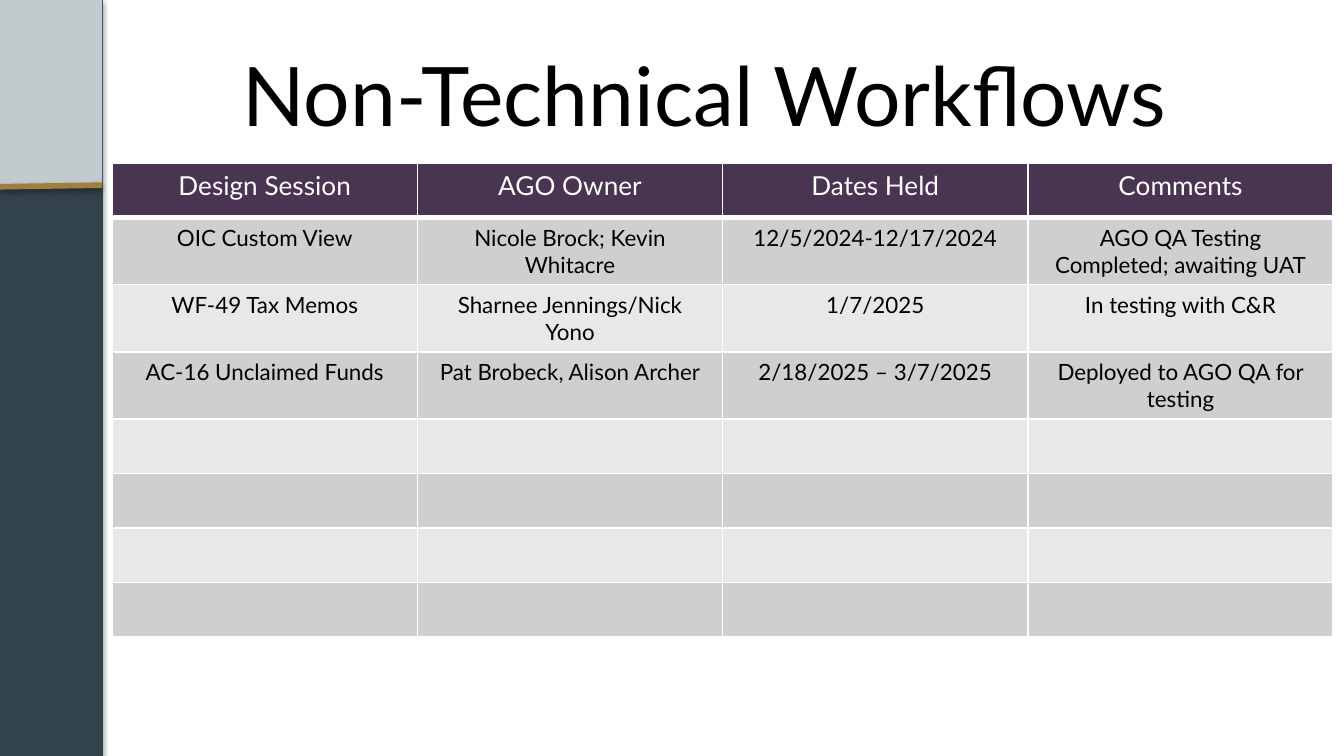
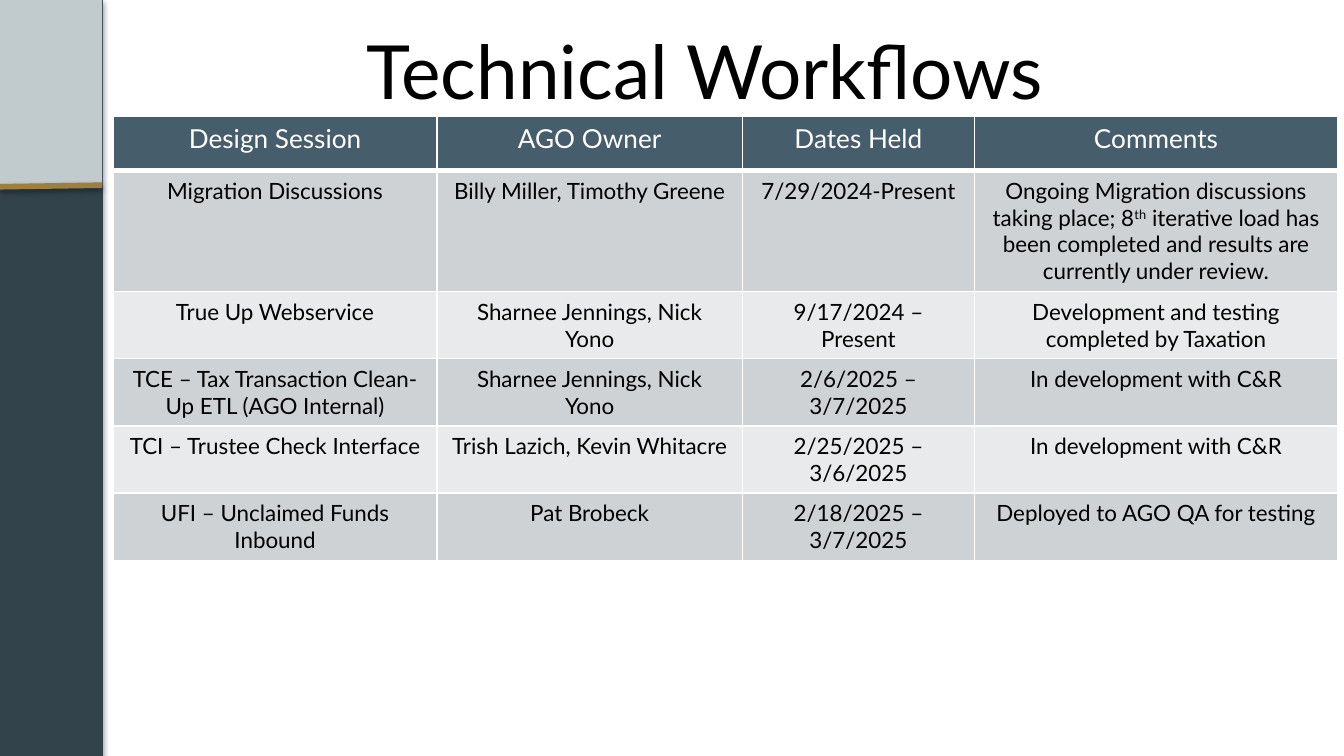
from lxml import etree
from pptx import Presentation
from pptx.dml.color import RGBColor
from pptx.enum import shapes, text
from pptx.oxml import ns
from pptx.util import Cm, Pt

FONT = "Lato"
BLACK = RGBColor(0x00, 0x00, 0x00)
WHITE = RGBColor(0xFF, 0xFF, 0xFF)
SLATE = RGBColor(0x33, 0x43, 0x4B)
MIST = RGBColor(0xC1, 0xCA, 0xCC)
GOLD = RGBColor(0x9E, 0x7F, 0x3D)
PLUM = RGBColor(0x49, 0x34, 0x51)
PLUM_BANDS = (RGBColor(0xD0, 0xCE, 0xD0), RGBColor(0xE9, 0xE8, 0xE9))
STEEL = RGBColor(0x46, 0x5D, 0x6B)
STEEL_BANDS = (RGBColor(0xCF, 0xD2, 0xD4), RGBColor(0xE9, 0xEA, 0xEB))

SLIDE_W, SLIDE_H = Cm(25.4), Cm(14.29)
SIDEBAR_W = Cm(1.93)
ROW_H = 1.03

HEADER = ("Design Session", "AGO Owner", "Dates Held", "Comments")
NON_TECHNICAL = [
    ("OIC Custom View", "Nicole Brock; Kevin Whitacre", "12/5/2024-12/17/2024",
     "AGO QA Testing Completed; awaiting UAT"),
    ("WF-49 Tax Memos", "Sharnee Jennings/Nick Yono", "1/7/2025",
     "In testing with C&R"),
    ("AC-16 Unclaimed Funds", "Pat Brobeck, Alison Archer",
     "2/18/2025 – 3/7/2025", "Deployed to AGO QA for testing"),
] + [("",) * 4] * 4
TECHNICAL = [
    ("Migration Discussions", "Billy Miller, Timothy Greene", "7/29/2024-Present",
     "Ongoing Migration discussions taking place; 8^th^ iterative load has been "
     "completed and results are currently under review."),
    ("True Up Webservice", "Sharnee Jennings, Nick Yono", "9/17/2024 – Present",
     "Development and testing completed by Taxation"),
    ("TCE – Tax Transaction Clean-Up ETL (AGO Internal)",
     "Sharnee Jennings, Nick Yono", "2/6/2025 – 3/7/2025",
     "In development with C&R"),
    ("TCI – Trustee Check Interface", "Trish Lazich, Kevin Whitacre",
     "2/25/2025 – 3/6/2025", "In development with C&R"),
    ("UFI – Unclaimed Funds Inbound", "Pat Brobeck", "2/18/2025 – 3/7/2025",
     "Deployed to AGO QA for testing"),
]


def add_xml(parent, tag, **attrs):
    child = etree.SubElement(parent, ns.qn(tag))
    for name, value in attrs.items():
        child.set(name, str(value))
    return child


class Deck:
    """Holds the shared style and the slide being built."""

    def __init__(self):
        self.prs = Presentation()
        self.prs.slide_width, self.prs.slide_height = SLIDE_W, SLIDE_H
        self.s = None

    def new_slide(self):
        self.s = self.prs.slides.add_slide(self.prs.slide_layouts[6])
        panel = self.rect(Cm(14.29), SLATE)
        panel.line.color.rgb = SLATE
        panel.line.width = Pt(0.75)
        self.shadow(panel, opacity=35, distance=1.8)
        self.rect(Cm(3.51), MIST)
        self.sidebar_rule()

    def shadow(self, sp, opacity, distance):
        """Cast a soft black shadow straight down."""
        spPr = sp._element.spPr
        effects = spPr.find(ns.qn("a:effectLst"))
        if effects is None:
            effects = add_xml(spPr, "a:effectLst")
        outer = add_xml(effects, "a:outerShdw", blurRad=Pt(3.1), dist=Pt(distance),
                        dir=90 * 60000, rotWithShape=0)
        color = add_xml(outer, "a:srgbClr", val=BLACK)
        add_xml(color, "a:alpha", val=opacity * 1000)

    def rect(self, height, fill):
        """Add a sidebar block that hangs from the top left corner."""
        sp = self.s.shapes.add_shape(
            shapes.MSO_SHAPE.RECTANGLE, 0, 0, SIDEBAR_W, height)
        sp.shadow.inherit = False
        sp.fill.solid()
        sp.fill.fore_color.rgb = fill
        sp.line.fill.background()
        return sp

    def sidebar_rule(self):
        line = self.s.shapes.add_connector(
            shapes.MSO_CONNECTOR.STRAIGHT, 0, Cm(3.53), SIDEBAR_W, Cm(3.5))
        line.line.color.rgb = GOLD
        line.line.width = Pt(3)
        self.shadow(line, opacity=38, distance=1.6)

    def style(self, r, size, color):
        r.font.name = FONT
        r.font.size = Pt(size)
        r.font.bold = False
        r.font.color.rgb = color

    def title(self, words, top, size):
        sp = self.s.shapes.add_textbox(Cm(2.51), Cm(top), Cm(21.62), Cm(2.39))
        tf = sp.text_frame
        tf.word_wrap = True
        tf.vertical_anchor = text.MSO_ANCHOR.MIDDLE
        p = tf.paragraphs[0]
        p.text = words
        p.alignment = text.PP_ALIGN.CENTER
        self.style(p.runs[0], size, BLACK)

    def borders(self, cell, top, bottom):
        tcPr = cell._tc.get_or_add_tcPr()
        for side, width in (("L", 1), ("R", 1), ("T", top), ("B", bottom)):
            ln = add_xml(tcPr, f"a:ln{side}", w=Pt(width))
            add_xml(add_xml(ln, "a:solidFill"), "a:srgbClr", val=WHITE)

    def cell(self, cell, words, size, color, fill):
        """Fill a cell; text between carets is set as superscript."""
        cell.fill.solid()
        cell.fill.fore_color.rgb = fill
        p = cell.text_frame.paragraphs[0]
        p.alignment = text.PP_ALIGN.CENTER
        if not words:
            return
        for i, piece in enumerate(words.split("^")):
            r = p.add_run()
            r.text = piece
            self.style(r, size, color)
            if i % 2:
                r._r.get_or_add_rPr().set("baseline", "30000")

    def table(self, left, top, widths, heights, rows, head_fill, bands):
        frame = self.s.shapes.add_table(
            len(rows) + 1, len(widths), Cm(left), Cm(top),
            Cm(sum(widths)), Cm(sum(heights)))
        tbl = frame.table
        tbl.horz_banding = False
        for column, width in zip(tbl.columns, widths):
            column.width = Cm(width)
        for i, (row, height) in enumerate(zip([HEADER] + rows, heights)):
            tbl.rows[i].height = Cm(height)
            for j, words in enumerate(row):
                cell = tbl.cell(i, j)
                self.borders(cell, top=3 if i == 1 else 1, bottom=3 if i == 0 else 1)
                if i == 0:
                    self.cell(cell, words, 14, WHITE, head_fill)
                else:
                    self.cell(cell, words, 12, BLACK, bands[(i - 1) % 2])


def main():
    deck = Deck()

    deck.new_slide()
    deck.title("Non-Technical Workflows", top=0.58, size=44)
    deck.table(2.12, 3.08, [5.77] * 4, [ROW_H] * 8,
               NON_TECHNICAL, PLUM, PLUM_BANDS)

    deck.new_slide()
    deck.title("Technical Workflows", top=0.13, size=40)
    deck.table(2.14, 2.19, [6.12, 5.77, 4.39, 6.86],
               [ROW_H, 0.71, 0.56, 0.66, 0.66, 0.66],
               TECHNICAL, STEEL, STEEL_BANDS)

    deck.prs.save("out.pptx")


if __name__ == "__main__":
    main()
